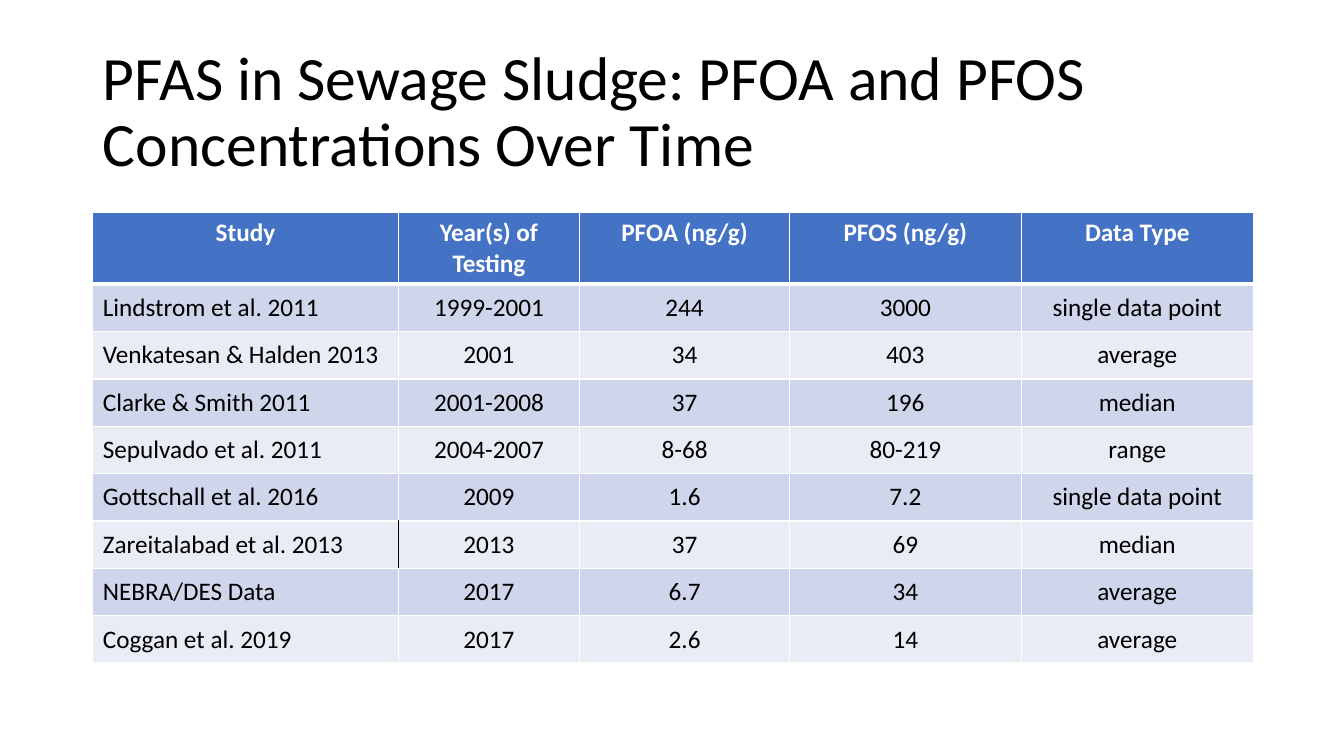
from lxml.etree import SubElement
from pptx import Presentation
from pptx.dml.color import RGBColor
from pptx.enum.text import MSO_ANCHOR as Anchor, MSO_AUTO_SIZE as AutoSize, PP_ALIGN as Align
from pptx.oxml.ns import qn
from pptx.util import Inches, Pt

BLACK = RGBColor(0x00, 0x00, 0x00)
WHITE = RGBColor(0xFF, 0xFF, 0xFF)
HEADER_BLUE = RGBColor(0x44, 0x72, 0xC4)
BANDS = [RGBColor(0xCF, 0xD5, 0xEA), RGBColor(0xE9, 0xEB, 0xF5)]

COLUMN_WIDTHS = [3.03, 1.8, 2.08, 2.3, 2.3]
HEADER_HEIGHT = 0.7
ROW_HEIGHT = 0.47
STUDIES = [
    ["Study", "Year(s) of Testing", "PFOA (ng/g)", "PFOS (ng/g)", "Data Type"],
    ["Lindstrom et al. 2011", "1999-2001", "244", "3000", "single data point"],
    ["Venkatesan & Halden 2013", "2001", "34", "403", "average"],
    ["Clarke & Smith 2011", "2001-2008", "37", "196", "median"],
    ["Sepulvado et al. 2011", "2004-2007", "8-68", "80-219", "range"],
    ["Gottschall et al. 2016", "2009", "1.6", "7.2", "single data point"],
    ["Zareitalabad et al. 2013", "2013", "37", "69", "median"],
    ["NEBRA/DES Data", "2017", "6.7", "34", "average"],
    ["Coggan et al. 2019", "2017", "2.6", "14", "average"],
]
BLACK_EDGES = {(6, 0): "R", (6, 1): "L"}


class SlideBuilder:
    font_name = "Calibri"
    title_size = Pt(44)
    table_size = Pt(18)

    def __init__(self, presentation):
        self.slide = presentation.slides.add_slide(presentation.slide_layouts[5])

    def format_paragraph(self, paragraph, size, color, bold, alignment):
        paragraph.alignment = alignment
        font = paragraph.font
        font.name, font.size, font.bold = self.font_name, size, bold
        font.color.rgb = color

    def title(self, text, left, top, width, height):
        shape = self.slide.shapes.title
        shape.left, shape.top = Inches(left), Inches(top)
        shape.width, shape.height = Inches(width), Inches(height)
        frame = shape.text_frame
        frame.text = text
        frame.word_wrap = True
        frame.auto_size = AutoSize.NONE
        frame.vertical_anchor = Anchor.MIDDLE
        paragraph = frame.paragraphs[0]
        paragraph.line_spacing = 0.9
        self.format_paragraph(paragraph, self.title_size, BLACK, False, Align.LEFT)

    def border(self, cell, side, color, width):
        properties = cell._tc.get_or_add_tcPr()
        line = SubElement(properties, qn(f"a:ln{side}"), w=str(Pt(width)))
        fill = SubElement(line, qn("a:solidFill"))
        SubElement(fill, qn("a:srgbClr"), val=str(color))

    def cell(self, cell, text, row, column):
        is_header = row == 0
        for side in "LRTB":
            color = BLACK if BLACK_EDGES.get((row, column)) == side else WHITE
            thick = (is_header and side == "B") or (row == 1 and side == "T")
            self.border(cell, side, color, 3 if thick else 1)
        cell.fill.solid()
        cell.fill.fore_color.rgb = HEADER_BLUE if is_header else BANDS[(row - 1) % 2]
        cell.vertical_anchor = Anchor.TOP if is_header else Anchor.MIDDLE
        cell.text = text
        self.format_paragraph(
            cell.text_frame.paragraphs[0],
            self.table_size,
            WHITE if is_header else BLACK,
            is_header,
            Align.CENTER if is_header or column else Align.LEFT,
        )

    def table(self, rows, left, top):
        heights = [HEADER_HEIGHT] + [ROW_HEIGHT] * (len(rows) - 1)
        table = self.slide.shapes.add_table(
            len(rows), len(COLUMN_WIDTHS), Inches(left), Inches(top),
            Inches(sum(COLUMN_WIDTHS)), Inches(sum(heights)),
        ).table
        for column, width in zip(table.columns, COLUMN_WIDTHS):
            column.width = Inches(width)
        for row, (texts, height) in enumerate(zip(rows, heights)):
            table.rows[row].height = Inches(height)
            for column, text in enumerate(texts):
                self.cell(table.cell(row, column), text, row, column)


def main():
    presentation = Presentation()
    presentation.slide_width = Inches(13.33)
    presentation.slide_height = Inches(7.5)
    builder = SlideBuilder(presentation)
    builder.title(
        "PFAS in Sewage Sludge: PFOA and PFOS Concentrations Over Time",
        0.92, 0.4, 11.5, 1.45,
    )
    builder.table(STUDIES, 0.92, 2.11)
    presentation.save("out.pptx")


if __name__ == "__main__":
    main()
